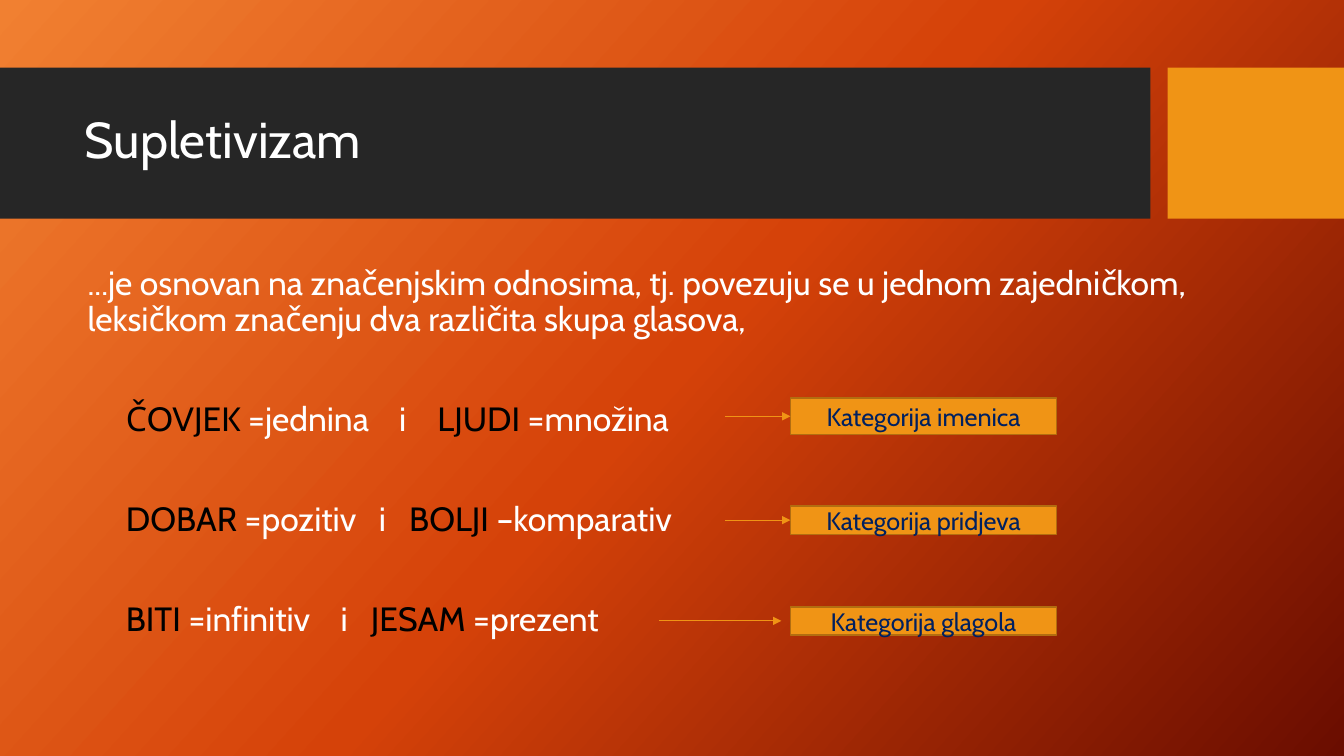
from copy import deepcopy

from pptx import Presentation
from pptx.dml.color import RGBColor
from pptx.enum import shapes, text
from pptx.oxml import ns, xmlchemy
from pptx.util import Inches, Pt

FONT = "Cabin"
COLORS = {
    "white": "FFFFFF", "black": "000000", "navy": "002060",
    "band": "262626", "accent": "F09415", "edge": "B26D10",
}
GRADIENT = [(0, "F18031"), (0.5, "D54209"), (1, "6A0D00")]

INTRO = ("...je osnovan na značenjskim odnosima, tj. povezuju se u jednom "
         "zajedničkom, leksičkom značenju dva različita skupa glasova,")
# Word pairs: first word, its form, second word, its form, tab stops
PAIRS = [
    ("ČOVJEK", " =jednina", "LJUDI", " =množina", (0.38, 3.09, 3.47)),
    ("DOBAR", " =pozitiv", "BOLJI", " –komparativ", (0.38, 2.89, 3.19)),
    ("BITI", " =infinitiv", "JESAM", " =prezent", (0.38, 2.51, 2.81)),
]
# Categories: label, top, height, arrow start, arrow end
CATEGORIES = [
    ("Kategorija imenica", 3.95, 0.36, 7.19, 7.84),
    ("Kategorija pridjeva", 5.02, 0.28, 7.19, 7.84),
    ("Kategorija glagola", 6.02, 0.28, 6.54, 7.75),
]
CATEGORY_LEFT, CATEGORY_WIDTH = 7.84, 2.64


def rgb(name):
    return RGBColor.from_string(COLORS[name])


def style(font, size, color):
    font.name, font.size = FONT, Pt(size)
    font.color.rgb = rgb(color)


def add_child(parent, tag, **attributes):
    child = xmlchemy.OxmlElement(tag)
    for key, value in attributes.items():
        child.set(key, str(value))
    parent.append(child)
    return child


def set_background(slide):
    fill = slide.background.fill
    fill.gradient()
    fill.gradient_angle = 318
    stop_list = slide.element.find(".//" + ns.qn("a:gsLst"))
    stop_list.append(deepcopy(stop_list[-1]))
    for stop, (position, color) in zip(fill.gradient_stops, GRADIENT):
        stop.position = position
        stop.color.rgb = RGBColor.from_string(color)


def add_box(slide, left, top, width, height, color, edge=None):
    box = slide.shapes.add_shape(
        shapes.MSO_SHAPE.RECTANGLE,
        Inches(left), Inches(top), Inches(width), Inches(height))
    box.shadow.inherit = False
    box.fill.solid()
    box.fill.fore_color.rgb = rgb(color)
    if edge:
        box.line.color.rgb = rgb(edge)
        box.line.width = Pt(1)
    else:
        box.line.fill.background()
    return box


def add_title(slide, wording):
    title = slide.shapes.title
    title.left, title.top = Inches(0.74), Inches(0.82)
    title.width, title.height = Inches(10.51), Inches(1.18)
    title.text_frame.text = wording
    title.text_frame.vertical_anchor = text.MSO_ANCHOR.MIDDLE
    heading = title.text_frame.paragraphs[0]
    heading.alignment = text.PP_ALIGN.LEFT
    heading.line_spacing = 0.9
    style(heading.runs[0].font, 36, "white")


def add_pair(frame, first, first_form, second, second_form, stops):
    pair = frame.add_paragraph()
    pair.line_spacing = 0.9
    pair.space_before = Pt(45.5)
    tabs = add_child(pair._p.get_or_add_pPr(), "a:tabLst")
    for stop in stops:
        add_child(tabs, "a:tab", pos=Inches(stop), algn="l")
    for wording, color in [("\t" + first, "black"),
                           (first_form + "\ti\t", "white"),
                           (second, "black"), (second_form, "white")]:
        run = pair.add_run()
        run.text = wording
        style(run.font, 24, color)


def add_body(slide):
    body = slide.shapes.add_textbox(
        Inches(0.77), Inches(2.59), Inches(11.59), Inches(4.34))
    frame = body.text_frame
    frame.word_wrap = True
    frame.text = INTRO
    intro = frame.paragraphs[0]
    intro.line_spacing = 0.9
    style(intro.runs[0].font, 24, "white")
    for pair in PAIRS:
        add_pair(frame, *pair)


def add_category(slide, wording, top, height, start, end):
    category = add_box(slide, CATEGORY_LEFT, top, CATEGORY_WIDTH, height,
                       "accent", "edge")
    frame = category.text_frame
    frame.text = wording
    frame.vertical_anchor = text.MSO_ANCHOR.MIDDLE
    label = frame.paragraphs[0]
    label.alignment = text.PP_ALIGN.CENTER
    style(label.runs[0].font, 18, "navy")

    # Arrow from the word pair to its category
    middle = Inches(top + height / 2)
    arrow = slide.shapes.add_connector(
        shapes.MSO_CONNECTOR.STRAIGHT,
        Inches(start), middle, Inches(end), middle)
    if end == CATEGORY_LEFT:
        arrow.end_connect(category, 1)
    arrow.line.color.rgb = rgb("accent")
    arrow.line.width = Pt(0.75)
    add_child(arrow.line._get_or_add_ln(), "a:tailEnd", type="triangle")
    add_child(arrow._element.spPr, "a:effectLst")


def main():
    deck = Presentation()
    deck.slide_width, deck.slide_height = Inches(13.33), Inches(7.5)
    slide = deck.slides.add_slide(deck.slide_layouts[5])
    set_background(slide)

    # Title band, moved behind the title placeholder
    bands = [add_box(slide, 0, 0.67, 11.41, 1.5, "band"),
             add_box(slide, 11.58, 0.67, 1.75, 1.5, "accent")]
    for band in bands:
        slide.shapes.title._element.addprevious(band._element)
    add_title(slide, "Supletivizam")

    # Definition, word pairs and their categories
    add_body(slide)
    for category in CATEGORIES:
        add_category(slide, *category)
    deck.save("out.pptx")


if __name__ == "__main__":
    main()
